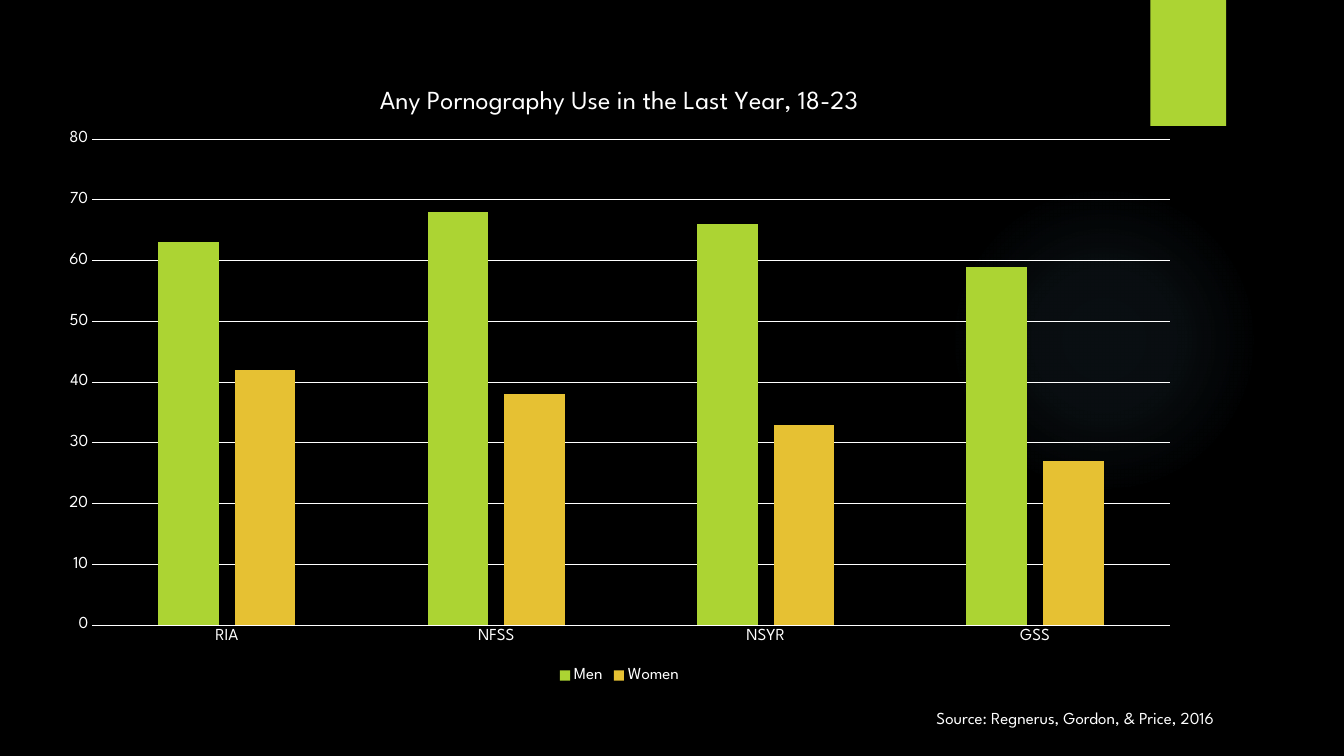
from dataclasses import dataclass

from lxml import etree
from pptx import Presentation
from pptx.chart.data import CategoryChartData
from pptx.dml.color import RGBColor
from pptx.enum.chart import XL_CHART_TYPE, XL_LEGEND_POSITION, XL_TICK_MARK
from pptx.enum.shapes import MSO_SHAPE
from pptx.enum.text import MSO_AUTO_SIZE
from pptx.oxml import parse_xml
from pptx.oxml.ns import nsdecls, qn
from pptx.util import Inches, Pt

ELLIPSE = MSO_SHAPE.OVAL
RECTANGLE = MSO_SHAPE.RECTANGLE
CLUSTERED = XL_CHART_TYPE.COLUMN_CLUSTERED
LEGEND_BOTTOM = XL_LEGEND_POSITION.BOTTOM
NO_TICK = XL_TICK_MARK.NONE
GROW = MSO_AUTO_SIZE.SHAPE_TO_FIT_TEXT

WIDTH, HEIGHT = Inches(13.33), Inches(7.5)
BLANK_LAYOUT = 6


@dataclass(frozen=True)
class Theme:
    font: str = "League Spartan"
    background: str = "000000"
    text: str = "FFFFFF"
    green: str = "ACD433"
    gold: str = "E6C133"
    glow: str = "7AC4F0"
    title_size: float = 18.6
    label_size: float = 12
    line_width: float = 0.75


THEME = Theme()
STUDIES = ("RIA", "NFSS", "NSYR", "GSS")
USE_BY_SEX = (
    ("Men", THEME.green, (63, 68, 66, 59)),
    ("Women", THEME.gold, (42, 38, 33, 27)),
)


def place(left, top, width, height):
    """Turn percentages of the slide into lengths."""
    return (int(WIDTH * left / 100), int(HEIGHT * top / 100),
            int(WIDTH * width / 100), int(HEIGHT * height / 100))


def paint(fill, color):
    fill.solid()
    fill.fore_color.rgb = RGBColor.from_string(color)


def style_font(font, size=THEME.label_size):
    font.name = THEME.font
    font.size = Pt(size)
    font.bold = False
    font.color.rgb = RGBColor.from_string(THEME.text)


def style_line(line):
    paint(line.fill, THEME.text)
    line.width = Pt(THEME.line_width)


def add_glow(slide, area):
    glow = slide.shapes.add_shape(ELLIPSE, *area)
    glow.shadow.inherit = False
    glow.line.fill.background()
    glow.fill.background()
    stops = "".join(
        f'<a:gs pos="{position * 1000}"><a:srgbClr val="{THEME.glow}">'
        f'<a:alpha val="{alpha * 1000}"/></a:srgbClr></a:gs>'
        for position, alpha in ((0, 7), (36, 6), (69, 0)))
    gradient = parse_xml(
        f'<a:gradFill {nsdecls("a")}><a:gsLst>{stops}</a:gsLst><a:path path="circle">'
        '<a:fillToRect l="50000" t="50000" r="50000" b="50000"/></a:path></a:gradFill>')
    properties = glow.element.spPr
    properties.replace(properties.find(qn("a:noFill")), gradient)


def add_tab(slide, area):
    tab = slide.shapes.add_shape(RECTANGLE, *area)
    tab.shadow.inherit = False
    paint(tab.fill, THEME.green)
    tab.line.fill.background()
    tab.element.spPr.find(qn("a:effectLst")).append(parse_xml(
        f'<a:outerShdw {nsdecls("a")} blurRad="{Pt(3)}" dist="{Pt(2)}" dir="5400000">'
        '<a:srgbClr val="000000"><a:alpha val="45000"/></a:srgbClr></a:outerShdw>'))


def fix_plot_area(chart, **shares):
    """Set the inner plot area as shares of the chart's size."""
    plot_area = chart.element.find(".//" + qn("c:plotArea"))
    for old in plot_area.findall(qn("c:layout")):
        plot_area.remove(old)
    layout = etree.Element(qn("c:layout"))
    manual = etree.SubElement(layout, qn("c:manualLayout"))
    settings = {"layoutTarget": "inner", "xMode": "edge", "yMode": "edge", **shares}
    for name, value in settings.items():
        etree.SubElement(manual, qn(f"c:{name}")).set("val", str(value))
    plot_area.insert(0, layout)


def style_axes(chart):
    for axis in (chart.category_axis, chart.value_axis):
        axis.major_tick_mark = axis.minor_tick_mark = NO_TICK
        style_font(axis.tick_labels.font)
    style_line(chart.category_axis.format.line)
    values = chart.value_axis
    values.minimum_scale, values.maximum_scale, values.major_unit = 0, 80, 10
    values.format.line.fill.background()
    values.has_major_gridlines = True
    style_line(values.major_gridlines.format.line)


def add_column_chart(slide, area, title):
    data = CategoryChartData()
    data.categories = STUDIES
    for name, _, values in USE_BY_SEX:
        data.add_series(name, values)
    chart = slide.shapes.add_chart(CLUSTERED, *area, data).chart
    style_font(chart.font)

    chart.has_title = True
    chart.chart_title.include_in_layout = False
    para = chart.chart_title.text_frame.paragraphs[0]
    para.text = title
    style_font(para.font, THEME.title_size)

    chart.has_legend = True
    chart.legend.position = LEGEND_BOTTOM
    chart.legend.include_in_layout = False
    style_font(chart.legend.font)

    plot = chart.plots[0]
    plot.vary_by_categories = False
    plot.gap_width, plot.overlap = 219, -27
    for series, (_, color, _) in zip(plot.series, USE_BY_SEX):
        paint(series.format.fill, color)
    style_axes(chart)
    fix_plot_area(chart, x=0.04, y=0.12, w=0.94, h=0.78)


def add_note(slide, area, text):
    frame = slide.shapes.add_textbox(*area).text_frame
    frame.word_wrap = False
    frame.auto_size = GROW
    para = frame.paragraphs[0]
    para.text = text
    style_font(para.font)


def main():
    deck = Presentation()
    deck.slide_width, deck.slide_height = WIDTH, HEIGHT
    slide = deck.slides.add_slide(deck.slide_layouts[BLANK_LAYOUT])
    paint(slide.background.fill, THEME.background)
    add_glow(slide, place(70.6, 24.4, 23.1, 41.07))
    add_tab(slide, place(85.6, 0, 5.63, 16.67))
    add_column_chart(slide, place(3.45, 8.53, 85.3, 82.4),
                     "Any Pornography Use in the Last Year, 18-23")
    add_note(slide, place(68.94, 92.93, 22.36, 4),
             "Source: Regnerus, Gordon, & Price, 2016")
    deck.save("out.pptx")


if __name__ == "__main__":
    main()
